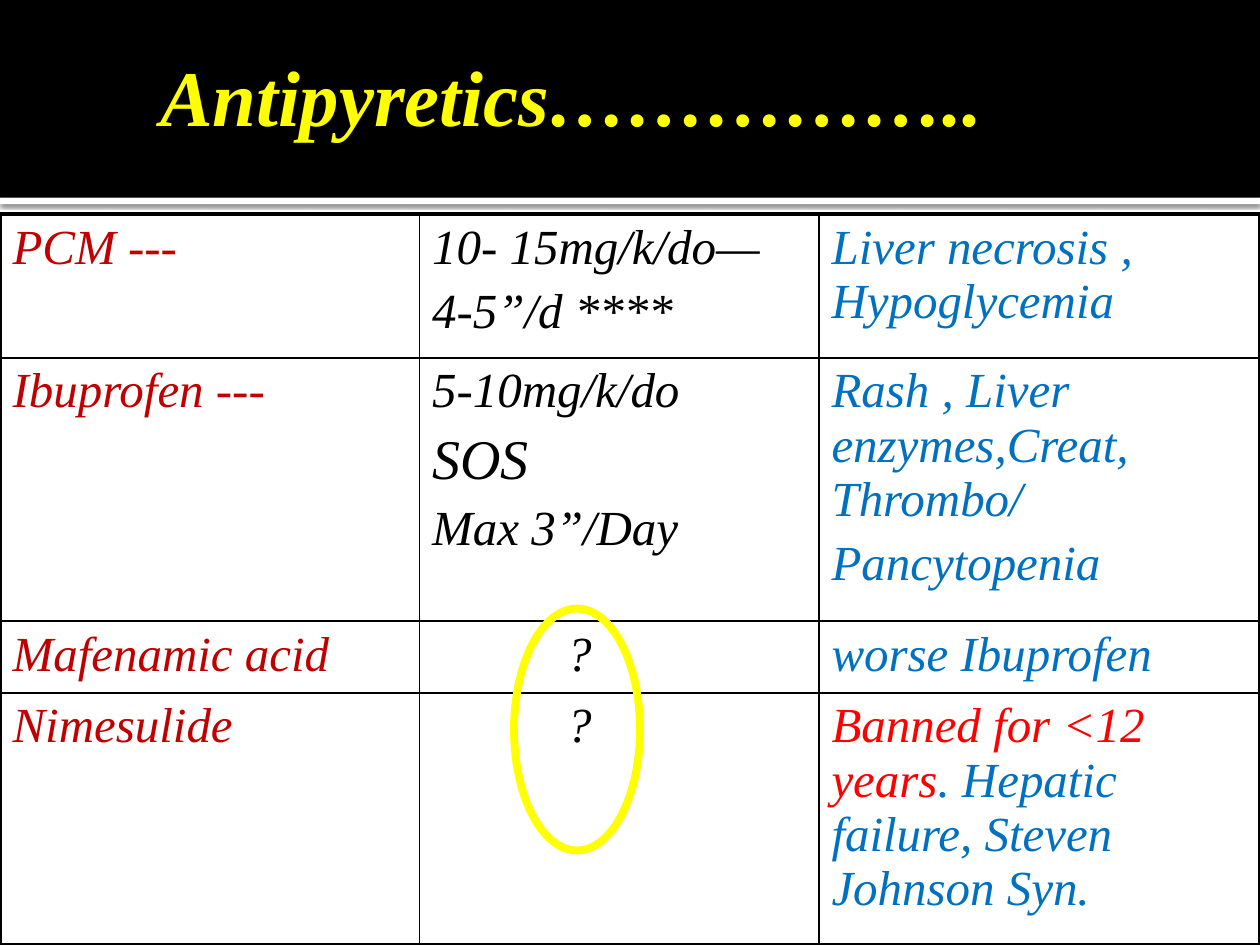
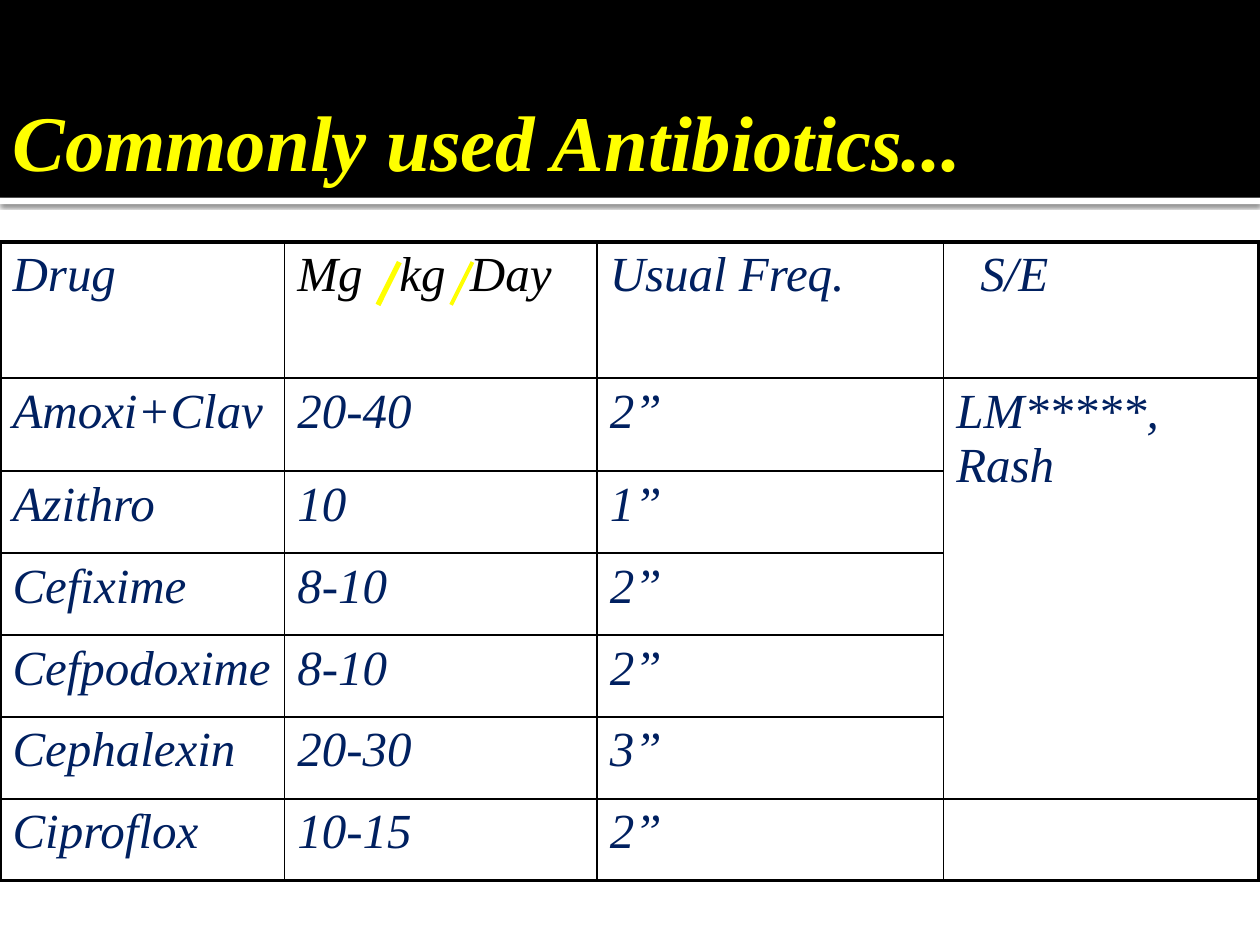
import pptx
import pptx.util
import pptx.dml.color
import pptx.enum.shapes
import pptx.enum.text
import pptx.oxml
import pptx.oxml.ns
from lxml import etree

Inches = pptx.util.Inches
Pt = pptx.util.Pt
SHAPE = pptx.enum.shapes.MSO_SHAPE
FONT = "Times New Roman"
SIZE = 28
COLORS = {
    "black": "000000", "white": "FFFFFF", "yellow": "FFFF00", "brick": "C00000",
    "blue": "0070C0", "red": "FF0000", "navy": "002060",
}


def color(name):
    return pptx.dml.color.RGBColor.from_string(COLORS[name])


def child(parent, tag, **attrs):
    return etree.SubElement(parent, pptx.oxml.ns.qn(tag), {k: str(v) for k, v in attrs.items()})


class Deck:
    def __init__(self):
        self.prs = pptx.Presentation()
        self.prs.slide_width = Inches(10)
        self.prs.slide_height = Inches(7.5)
        self.layout = self.prs.slide_layouts[5]
        self.slide = None

    def start(self, text, *box):
        self.slide = self.prs.slides.add_slide(self.layout)
        if len(self.prs.slides) == 1:
            self.bands()
        title = self.slide.shapes.title
        title.left, title.top, title.width, title.height = map(Inches, box)
        frame = title.text_frame
        frame.auto_size = pptx.enum.text.MSO_AUTO_SIZE.NONE
        frame.word_wrap = True
        frame.vertical_anchor = pptx.enum.text.MSO_ANCHOR.MIDDLE
        frame.margin_left = Inches(0.1)
        frame.margin_right = frame.margin_top = frame.margin_bottom = Inches(0.05)
        para = frame.paragraphs[0]
        para.alignment = pptx.enum.text.PP_ALIGN.LEFT
        self.run(para, text, "yellow", 45, True)

    def bands(self):
        rule = self.shape(SHAPE.RECTANGLE, 0, 1.57, 10, 0.05, fill="white")
        effects = rule._element.spPr.find(pptx.oxml.ns.qn("a:effectLst"))
        glow = child(effects, "a:outerShdw", blurRad=Pt(2.5), dist=Pt(0.8),
                     dir=5400000, algn="t", rotWithShape=0)
        tint = child(glow, "a:srgbClr", val=COLORS["black"])
        child(tint, "a:alpha", val=60000)
        head = self.shape(SHAPE.RECTANGLE, 0, 0, 10, 1.57, fill="black")
        for spot, band in enumerate((rule, head)):
            band._element.nvSpPr.cNvPr.set("id", str(100 + spot))
            self.layout.shapes._spTree.insert(2 + spot, band._element)

    def shape(self, kind, *box, fill=None, line=None, width=1):
        item = self.slide.shapes.add_shape(kind, *map(Inches, box))
        item.shadow.inherit = False
        for part, name in ((item.fill, fill), (item.line.fill, line)):
            if name:
                part.solid()
                part.fore_color.rgb = color(name)
            else:
                part.background()
        if line:
            item.line.width = Pt(width)
        return item

    def line(self, x1, y1, x2, y2, name, width):
        kind = pptx.enum.shapes.MSO_CONNECTOR.STRAIGHT
        item = self.slide.shapes.add_connector(kind, *map(Inches, (x1, y1, x2, y2)))
        item.line.color.rgb = color(name)
        item.line.width = Pt(width)
        child(item._element.spPr, "a:effectLst")

    def run(self, para, text, name, size=SIZE, bold=False):
        run = para.add_run()
        run.text = text
        font = run.font
        font.name, font.size, font.bold, font.italic = FONT, Pt(size), bold, True
        font.color.rgb = color(name)

    def words(self, cell, lines):
        frame = cell.text_frame
        for i, runs in enumerate(lines):
            para = frame.add_paragraph() if i else frame.paragraphs[0]
            if i:
                para.space_before = Pt(0.2 * (runs[0][2] if len(runs[0]) > 2 else SIZE))
            for item in runs:
                self.run(para, *item)

    def border(self, cell, edges):
        props = cell._tc.get_or_add_tcPr()
        for side, outer in edges:
            line = child(props, "a:ln" + side, w=Pt(2.25 if outer else 1))
            child(child(line, "a:solidFill"), "a:srgbClr", val=COLORS["black"])
        cell.fill.background()

    def table(self, top, widths, heights, rows, tints):
        last, end = len(heights) - 1, len(widths) - 1
        grid = self.slide.shapes.add_table(
            last + 1, end + 1, 0, Inches(top), Inches(sum(widths)), Inches(sum(heights))).table
        grid.first_row = grid.horz_banding = False
        for col, width in zip(grid.columns, widths):
            col.width = Inches(width)
        for row, height in zip(grid.rows, heights):
            row.height = Inches(height)
        for r, row in enumerate(rows):
            for c, value in enumerate(row):
                cell = grid.cell(r, c)
                self.border(cell, (("L", c == 0), ("R", c == end), ("T", r == 0), ("B", r == last)))
                if isinstance(value, str):
                    value = [[(text, tints[c])] for text in value.split("\n") if text]
                self.words(cell, value)
        return grid

    def indent(self, cell, inches):
        props = cell.text_frame.paragraphs[0]._p.get_or_add_pPr()
        props.set("marL", str(Inches(inches)))

    def tabs(self, cell, stops):
        props = cell.text_frame.paragraphs[0]._p.get_or_add_pPr()
        tabs = child(props, "a:tabLst")
        for stop in stops:
            child(tabs, "a:tab", pos=Inches(stop), algn="l")


def fever(deck):
    deck.start("Antipyretics……………..", 1.17, 0, 8.25, 1.5)
    sos = [[("5-10mg/k/do", "black")], [("SOS", "black", 32)], [("Max 3”/Day", "black")]]
    ban = [[("Banned for <12 years", "red"),
            (". Hepatic failure, Steven Johnson Syn.", "blue")]]
    rows = [
        ("PCM ---", "10- 15mg/k/do—\n4-5”/d ****", "Liver necrosis , Hypoglycemia"),
        ("Ibuprofen ---", sos, "Rash , Liver enzymes,Creat, Thrombo/\nPancytopenia"),
        ("Mafenamic acid", "?", "worse Ibuprofen"),
        ("Nimesulide", "?", ban),
    ]
    grid = deck.table(1.7, (3.33, 3.17, 3.5), (1.14, 2.09, 0.57, 2), rows,
                      ("brick", "black", "blue"))
    for r in (2, 3):
        deck.indent(grid.cell(r, 1), 1.07)
    deck.shape(SHAPE.OVAL, 4.08, 4.83, 1, 1.92, line="yellow", width=4.5)


def germs(deck):
    deck.start("Commonly used Antibiotics...", 0, 0.33, 9.42, 1.57)
    rows = [
        ("Drug", [[("Mg\tkg\tDay", "black")]], "Usual Freq.", "S/E"),
        ("Amoxi+Clav", "20-40", "2”", "LM*****, Rash"),
        ("Azithro", "10", "1”", ""),
        ("Cefixime", "8-10", "2”", ""),
        ("Cefpodoxime", "8-10", "2”", ""),
        ("Cephalexin", "20-30", "3”", ""),
        ("Ciproflox", "10-15", "2”", ""),
    ]
    grid = deck.table(1.92, (2.26, 2.48, 2.75, 2.5), [1.08, 0.74] + [0.65] * 5, rows,
                      ["navy"] * 4)
    grid.cell(1, 3).merge(grid.cell(5, 3))
    deck.tabs(grid.cell(0, 1), (0.81, 1.37))
    deck.indent(grid.cell(0, 3), 0.19)
    for x, width in ((3, 3), (3.58, 2.25)):
        deck.line(x, 2.42, x + 0.17, 2.08, "yellow", width)


def main():
    deck = Deck()
    fever(deck)
    germs(deck)
    deck.prs.save("out.pptx")


if __name__ == "__main__":
    main()
